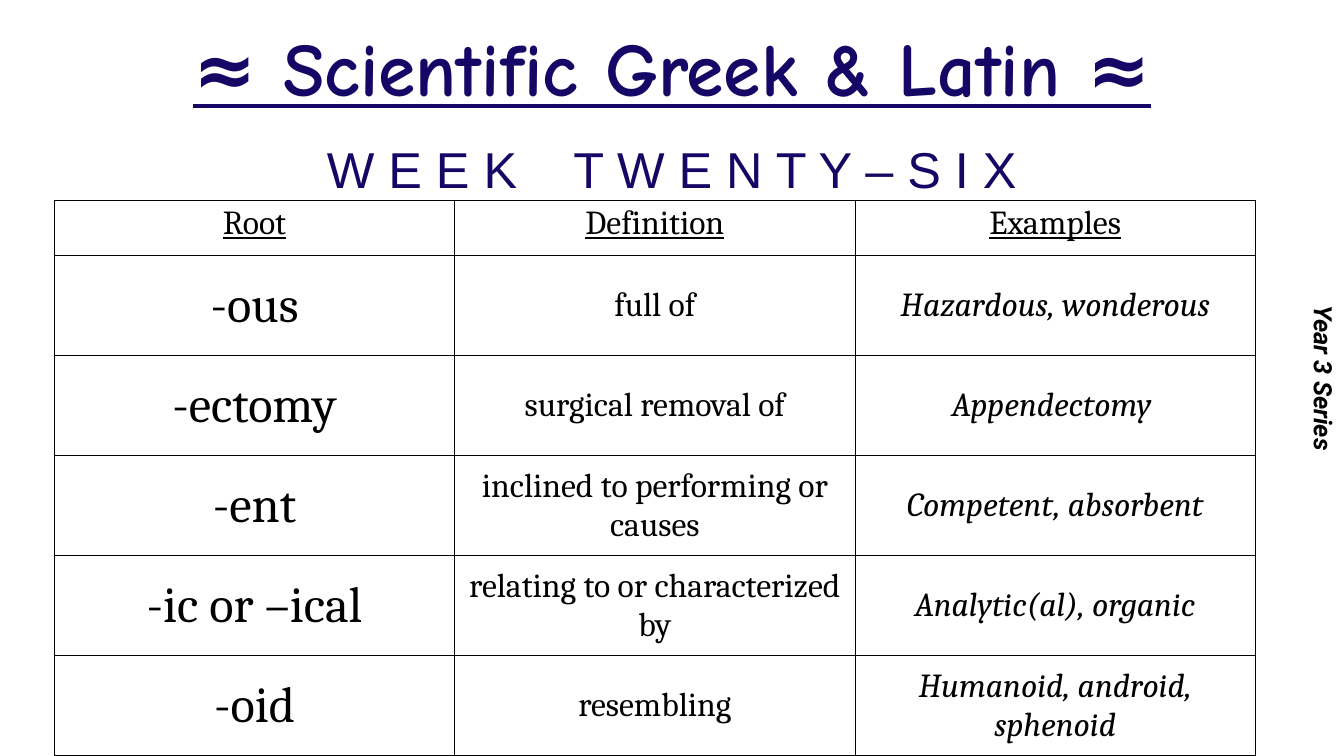
from pptx import Presentation
from pptx.dml.color import RGBColor
from pptx.enum.text import MSO_ANCHOR as Anchor, PP_ALIGN as Align
from pptx.oxml import parse_xml
from pptx.oxml.ns import nsdecls
from pptx.util import Inches, Pt

WIDTH, HEIGHT = 13.33, 7.5
NAVY, BLACK = "150765", "000000"

HEADINGS = ["Root", "Definition", "Examples"]
ROOTS = [
    ("-ous", "full of", "Hazardous, wonderous"),
    ("-ectomy", "surgical removal of", "Appendectomy "),
    ("-ent", "inclined to performing or causes", "Competent, absorbent"),
    ("-ic or –ical", "relating to or characterized by", "Analytic(al), organic"),
    ("-oid", "resembling", "Humanoid, android, sphenoid"),
]
COLUMN_FORMATS = [{"size": 36}, {"size": 24}, {"size": 24, "italic": True}]


def color(value):
    return RGBColor.from_string(value)


def write(para, text, font="Cambria", size=24, hue=BLACK, bold=False,
          italic=False, underline=False, spacing=0):
    """Add a centred, formatted span; spacing is in points per letter."""
    para.alignment = Align.CENTER
    span = para.add_run()
    span.text = text
    style = span.font
    style.name, style.size = font, Pt(size)
    style.bold, style.italic, style.underline = bold, italic, underline
    style.color.rgb = color(hue)
    if spacing:
        span._r.get_or_add_rPr().set("spc", str(spacing * 100))


class SlideBuilder:
    def __init__(self, deck):
        self.page = deck.slides.add_slide(deck.slide_layouts[5])
        self.page.background.fill.solid()
        self.page.background.fill.fore_color.rgb = color("FFFFFF")

    def area(self, left, top, width, height):
        """Turn shares of the slide's size into lengths."""
        return [Inches(share * side) for share, side in
                zip((left, top, width, height), (WIDTH, HEIGHT) * 2)]

    def title(self, text, area, **style):
        box = self.page.shapes.title
        box.left, box.top, box.width, box.height = self.area(*area)
        box.text_frame.vertical_anchor = Anchor.MIDDLE
        para = box.text_frame.paragraphs[0]
        para.line_spacing = 0.9
        write(para, text, **style)

    def text(self, area, anchor=Anchor.TOP, vertical=False):
        """Add a text box and return its paragraph."""
        frame = self.page.shapes.add_textbox(*self.area(*area)).text_frame
        frame.word_wrap = True
        frame.vertical_anchor = anchor
        if vertical:
            frame._txBody.bodyPr.set("vert", "vert")
        return frame.paragraphs[0]

    def table(self, area, header_height, headings, rows, formats):
        box = self.page.shapes.add_table(
            len(rows) + 1, len(headings), *self.area(*area))
        table = box.table
        table.first_row = table.horz_banding = False
        body_height = (box.height - Inches(header_height)) // len(rows)
        for number, row in enumerate(table.rows):
            row.height = body_height if number else Inches(header_height)
        for column, heading in enumerate(headings):
            self.cell(table.cell(0, column), heading, Anchor.TOP, underline=True)
        for number, row in enumerate(rows, 1):
            for column, text in enumerate(row):
                self.cell(table.cell(number, column), text, Anchor.MIDDLE,
                          **formats[column])

    def cell(self, cell, text, anchor, **style):
        cell.vertical_anchor = anchor
        cell.margin_left = cell.margin_right = Inches(0.07)
        cell.margin_top = cell.margin_bottom = Inches(0.04)
        write(cell.text_frame.paragraphs[0], text, **style)
        properties = cell._tc.get_or_add_tcPr()
        for side in ("lnL", "lnR", "lnT", "lnB"):
            properties.append(parse_xml(
                f'<a:{side} {nsdecls("a")} w="9525"><a:solidFill>'
                f'<a:srgbClr val="{BLACK}"/></a:solidFill></a:{side}>'))
        cell.fill.background()


def main():
    deck = Presentation()
    deck.slide_width, deck.slide_height = Inches(WIDTH), Inches(HEIGHT)
    slide = SlideBuilder(deck)

    # Title and week
    slide.title("≈ Scientific Greek & Latin ≈", (0.125, 0, 0.75, 0.19),
                font="Comic Neue", size=54, hue=NAVY, bold=True, underline=True)
    week = slide.text((0.125, 0.175, 0.75, 0.095), Anchor.MIDDLE)
    for text, spacing in (("W E E K", 0), (" ", 30), ("T W E N T Y – S I X", 0)):
        write(week, text, font="Arial", size=36, hue=NAVY, spacing=spacing)

    # Word roots
    slide.table((0.0405, 0.265, 0.8935, 0.735), 0.55, HEADINGS, ROOTS,
                COLUMN_FORMATS)

    # Series label along the right edge
    series = slide.text((0.9625, 0, 0.0375, 1), vertical=True)
    write(series, "Year 3 Series", font="Roboto", size=18, bold=True, italic=True)

    deck.save("out.pptx")


if __name__ == "__main__":
    main()
